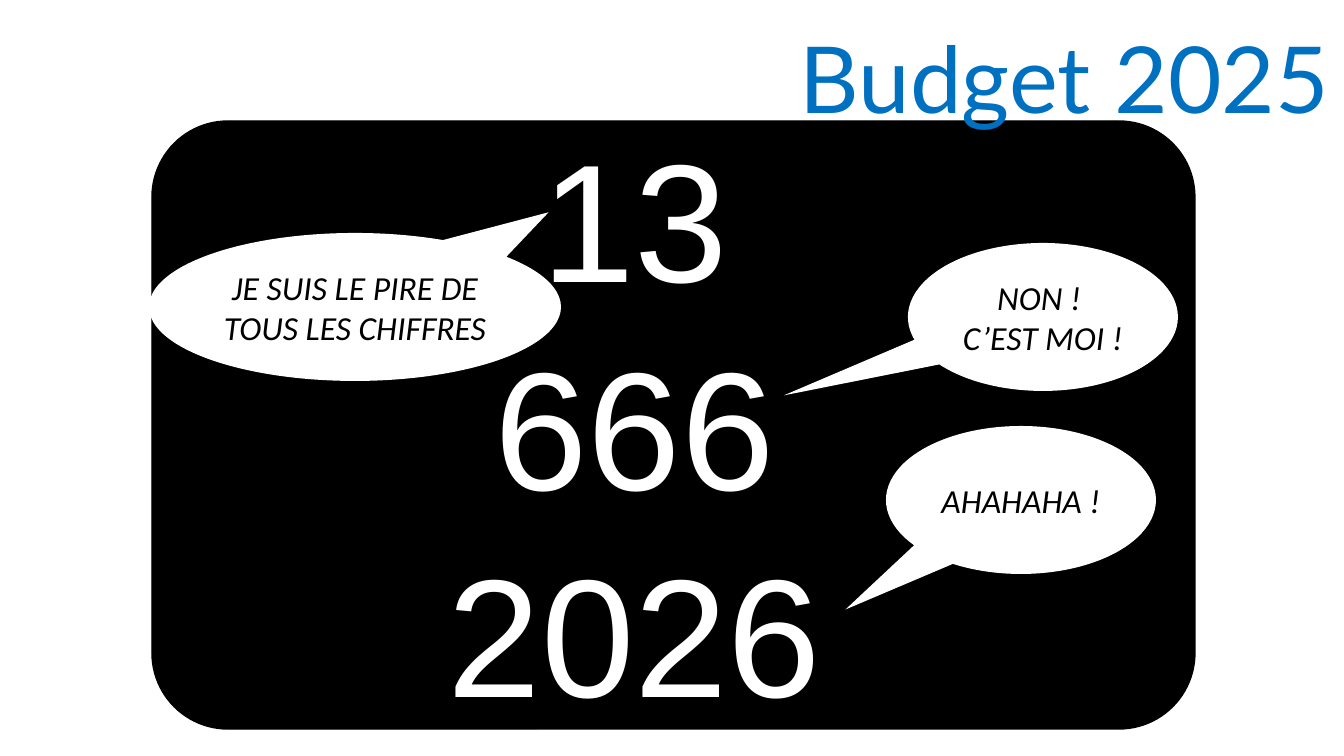
from pptx import Presentation
from pptx.dml.color import RGBColor
from pptx.enum.shapes import MSO_SHAPE
from pptx.enum.text import MSO_ANCHOR, MSO_AUTO_SIZE, PP_ALIGN
from pptx.util import Emu, Pt

TITLE = "Budget 2025"
PANEL = (152, 121, 1043, 608)
NUMBERS = [("2026", 525), ("666", 318), ("13", 110)]
BUBBLES = [
    ("AHAHAHA !", (886, 426, 270, 148), (-0.65, 0.74)),
    ("NON ! \nC’EST MOI !", (908, 243, 270, 148), (-0.96, 0.53)),
    ("JE SUIS LE PIRE DE TOUS LES CHIFFRES", (149, 233, 412, 148), (0.47, -0.64)),
]


def px(n):
    return Emu(round(n * 914400 / 100.8))


def color(code):
    return RGBColor.from_string(code)


def write(shape, text, font, size, ink, align=PP_ALIGN.CENTER,
          anchor=MSO_ANCHOR.TOP, italic=False, side=None):
    frame = shape.text_frame
    frame.text = text
    frame.word_wrap = True
    frame.vertical_anchor = anchor
    if side is not None:
        frame.margin_left = frame.margin_right = px(side)
    for para in frame.paragraphs:
        para.alignment = align
        para.font.name = font
        para.font.size = Pt(size)
        para.font.italic = italic
        para.font.color.rgb = color(ink)


def draw(slide, kind, box, fill):
    shape = slide.shapes.add_shape(kind, *map(px, box))
    shape.shadow.inherit = False
    shape.fill.solid()
    shape.fill.fore_color.rgb = color(fill)
    shape.line.fill.background()
    return shape


def main():
    deck = Presentation()
    deck.slide_width, deck.slide_height = px(1344), px(756)
    slide = deck.slides.add_slide(deck.slide_layouts[5])

    title = slide.shapes.title
    title.left, title.top, title.width, title.height = map(px, (0, 16, 1339, 122))
    write(title, TITLE, "Lato", 66, "0070C0", align=PP_ALIGN.RIGHT)
    title.text_frame.auto_size = MSO_AUTO_SIZE.SHAPE_TO_FIT_TEXT

    panel = draw(slide, MSO_SHAPE.ROUNDED_RECTANGLE, PANEL, "000000")
    panel.adjustments[0] = 0.125
    panel.line.color.rgb = color("000000")
    panel.line.width = Pt(1)
    title.element.addprevious(panel.element)

    for (number, top), (words, box, tip) in zip(NUMBERS, BUBBLES):
        label = slide.shapes.add_textbox(*map(px, (428, top, 413, 192)))
        write(label, number, "Arial", 120, "FFFFFF", side=0)
        bubble = draw(slide, MSO_SHAPE.OVAL_CALLOUT, box, "FFFFFF")
        bubble.adjustments[0], bubble.adjustments[1] = tip
        write(bubble, words, "Calibri", 24, "000000",
              anchor=MSO_ANCHOR.MIDDLE, italic=True)

    deck.save("out.pptx")


if __name__ == "__main__":
    main()
